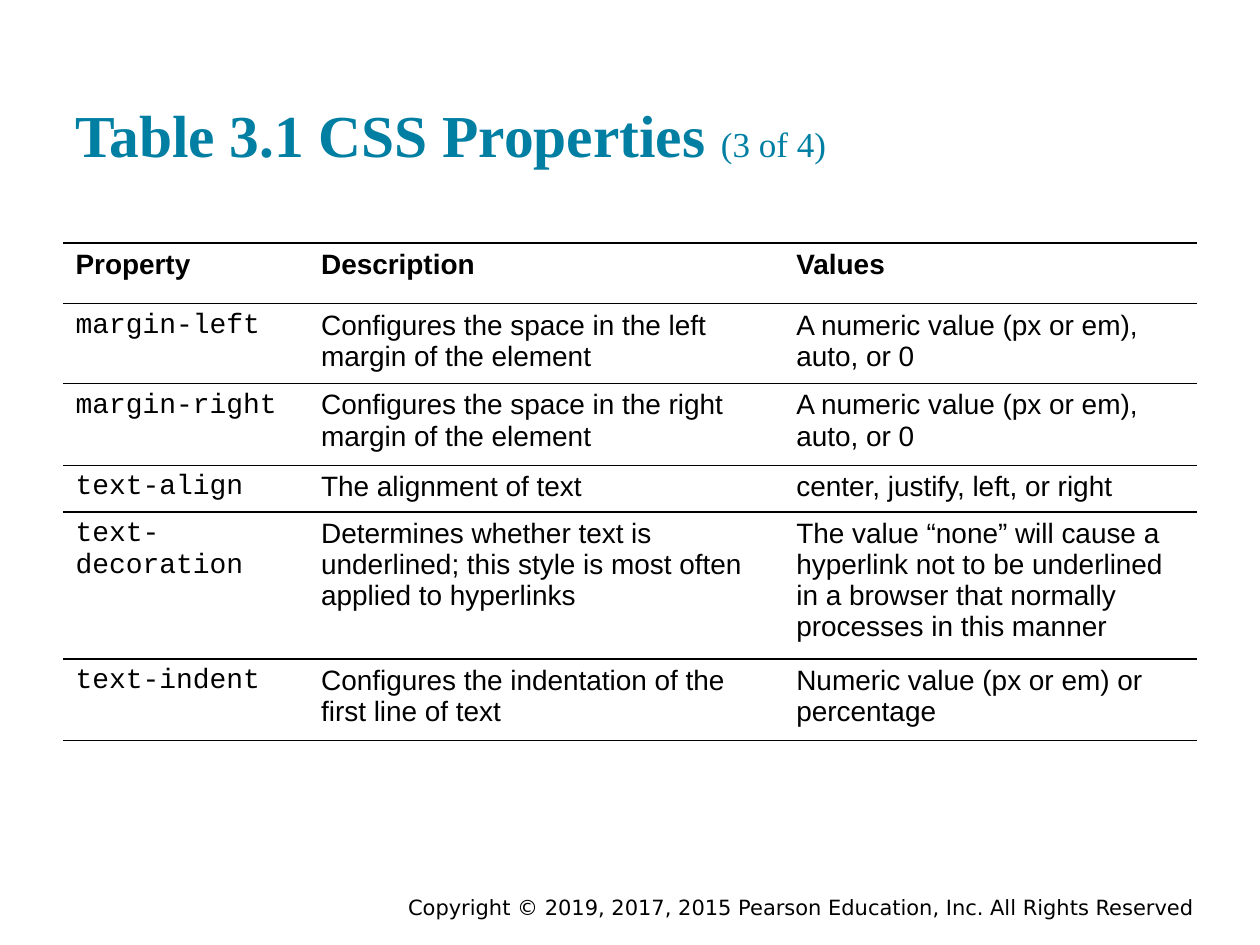
from lxml.etree import SubElement
from pptx import Presentation
from pptx.dml.color import RGBColor
from pptx.enum.text import MSO_ANCHOR as Anchor, PP_ALIGN as Align
from pptx.oxml.ns import qn
from pptx.util import Cm, Pt

COLORS = {"title": "007FA3", "text": "000000", "line": "000000", "cell": "FFFFFF"}

COLUMNS = [4.95, 9.58, 8.33]
ROW_HEIGHTS = [1.22, 1.57, 1.65, 0.94, 2.77, 1.65]
ROWS = [
    ("Property", "Description", "Values"),
    ("margin-left", "Configures the space in the left margin of the element",
     "A numeric value (px or em), auto, or 0"),
    ("margin-right", "Configures the space in the right margin of the element",
     "A numeric value (px or em), auto, or 0"),
    ("text-align", "The alignment of text", "center, justify, left, or right"),
    ("text-decoration",
     "Determines whether text is underlined; this style is most often applied to hyperlinks",
     "The value “none” will cause a hyperlink not to be underlined in a browser "
     "that normally processes in this manner"),
    ("text-indent", "Configures the indentation of the first line of text",
     "Numeric value (px or em) or percentage"),
]


def color(name):
    return RGBColor.from_string(COLORS[name])


def style(r, font, size, color_name="text", bold=False):
    r.font.name = font
    r.font.size = Pt(size)
    r.font.bold = bold
    r.font.color.rgb = color(color_name)


def add_text(s, left, top, width, height, anchor):
    """Add a wrapped text box and return its first paragraph."""
    tf = s.shapes.add_textbox(Cm(left), Cm(top), Cm(width), Cm(height)).text_frame
    tf.word_wrap = True
    tf.vertical_anchor = anchor
    tf.margin_left = tf.margin_right = tf.margin_top = tf.margin_bottom = Cm(0.25)
    return tf.paragraphs[0]


def add_title(s):
    p = add_text(s, 1.27, 0.61, 22.86, 3.05, Anchor.BOTTOM)
    for text, size, bold in [("Table 3.1 CSS Properties ", 34, True),
                             ("(3 of 4)", 20, False)]:
        r = p.add_run()
        r.text = text
        style(r, "Times New Roman", size, "title", bold)


def add_footer(s):
    p = add_text(s, 7.54, 17.96, 16.79, 0.64, Anchor.MIDDLE)
    p.text = "Copyright © 2019, 2017, 2015 Pearson Education, Inc. All Rights Reserved"
    p.alignment = Align.RIGHT
    style(p.runs[0], "DejaVu Sans", 12)


def set_borders(cell):
    """Rule the top and bottom of a cell and leave its sides open."""
    tcPr = cell._tc.get_or_add_tcPr()
    for side in "LRTB":
        ln = SubElement(tcPr, qn(f"a:ln{side}"), w=str(Pt(1)))
        if side in "LR":
            SubElement(ln, qn("a:noFill"))
        else:
            fill = SubElement(ln, qn("a:solidFill"))
            SubElement(fill, qn("a:srgbClr"), val=COLORS["line"])


def fill_cell(cell, text, font, bold):
    cell.text_frame.text = text
    style(cell.text_frame.paragraphs[0].runs[0], font, 16, bold=bold)
    # Borders come before the fill in the cell properties
    set_borders(cell)
    cell.fill.solid()
    cell.fill.fore_color.rgb = color("cell")


def add_property_table(s):
    table = s.shapes.add_table(len(ROWS), len(COLUMNS), Cm(1.27), Cm(4.9),
                               Cm(sum(COLUMNS)), Cm(sum(ROW_HEIGHTS))).table
    table.horz_banding = False
    for column, width in zip(table.columns, COLUMNS):
        column.width = Cm(width)
    for i, (row, height) in enumerate(zip(table.rows, ROW_HEIGHTS)):
        row.height = Cm(height)
        for j, text in enumerate(ROWS[i]):
            is_code = i > 0 and j == 0
            fill_cell(table.cell(i, j), text,
                      "Courier New" if is_code else "Arial", bold=i == 0)


def main():
    prs = Presentation()
    prs.slide_width, prs.slide_height = Cm(25.4), Cm(19.05)
    s = prs.slides.add_slide(prs.slide_layouts[6])
    add_footer(s)
    add_title(s)
    add_property_table(s)
    prs.save("out.pptx")


if __name__ == "__main__":
    main()
